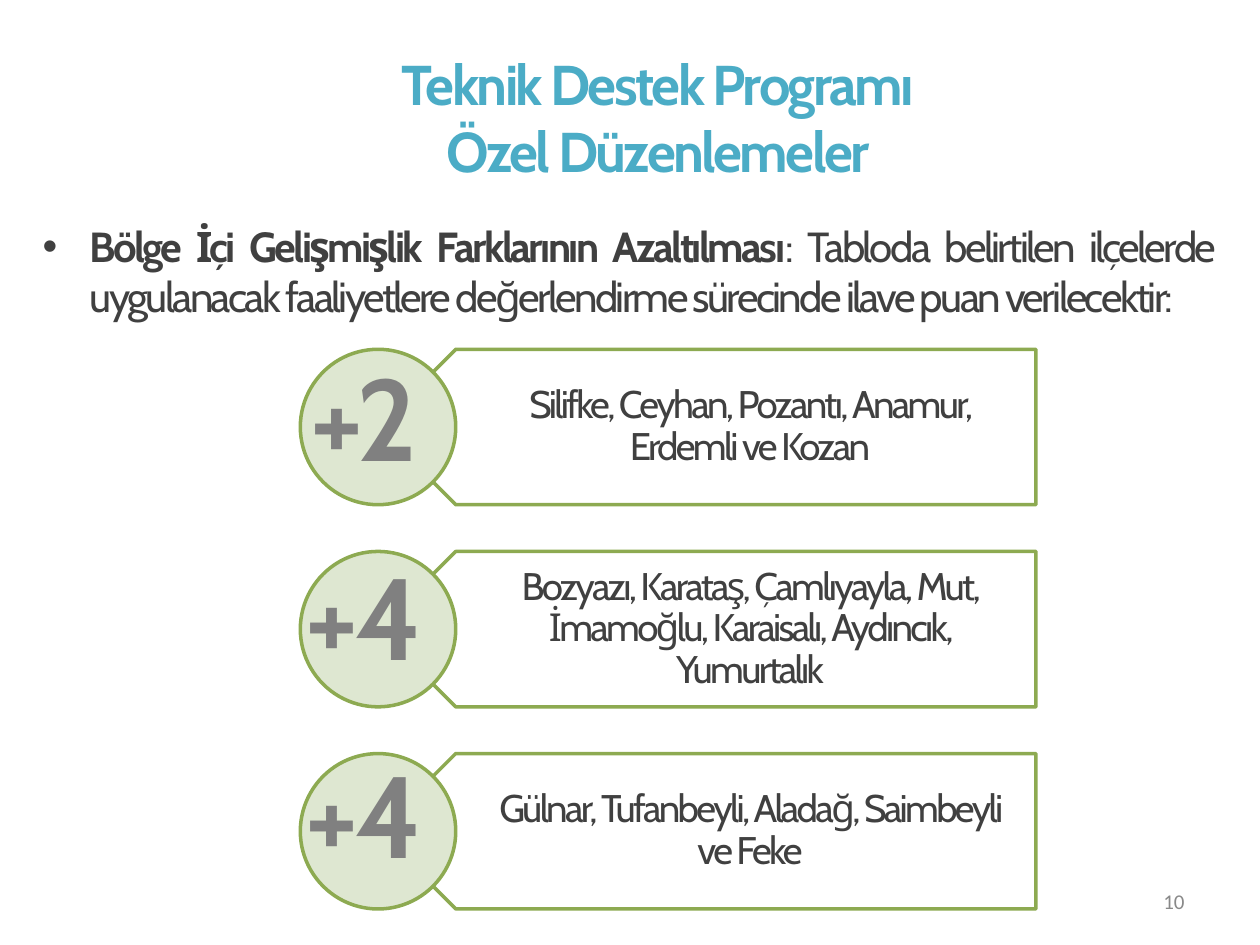
from pptx import Presentation
from pptx.dml.color import RGBColor
from pptx.enum.shapes import MSO_SHAPE as SHAPE
from pptx.enum.text import MSO_ANCHOR as ANCHOR, PP_ALIGN as ALIGN
from pptx.oxml.ns import qn
from pptx.util import Pt
from lxml import etree

TEAL = RGBColor(0x4B, 0xAC, 0xC6)
DARK = RGBColor(0x40, 0x40, 0x40)
GRAY = RGBColor(0x80, 0x80, 0x80)
LIGHT_GRAY = RGBColor(0x89, 0x89, 0x89)
GREEN = RGBColor(0x8D, 0xAA, 0x51)
PALE_GREEN = RGBColor(0xDE, 0xE7, 0xD1)
WHITE = RGBColor(0xFF, 0xFF, 0xFF)


def add_run(p, text, size, color, bold=False, font="Cabin", spacing=-150):
    r = p.add_run()
    r.text = text
    r.font.size = Pt(size)
    r.font.name = font
    r.font.bold = bold
    r.font.color.rgb = color
    if spacing:
        r.font._element.set("spc", str(spacing))


def add_outlined(kind, left, top, width, height, fill):
    sp = s.shapes.add_shape(kind, Pt(left), Pt(top), Pt(width), Pt(height))
    sp.shadow.inherit = False
    sp.fill.solid()
    sp.fill.fore_color.rgb = fill
    sp.line.color.rgb = GREEN
    sp.line.width = Pt(2)
    return sp


prs = Presentation()
prs.slide_width, prs.slide_height = Pt(720), Pt(540)
s = prs.slides.add_slide(prs.slide_layouts[5])

# Title
title = s.shapes.title
title.left, title.top, title.width, title.height = Pt(52), Pt(21.6), Pt(648), Pt(90)
tf = title.text_frame
tf.vertical_anchor = ANCHOR.MIDDLE
for i, line in enumerate(["Teknik Destek Programı", "Özel Düzenlemeler"]):
    p = tf.add_paragraph() if i else tf.paragraphs[0]
    p.alignment = ALIGN.CENTER
    add_run(p, line, 32, TEAL, bold=True)

# Slide number
tf = s.shapes.add_textbox(Pt(516), Pt(500.5), Pt(168), Pt(28.75)).text_frame
tf.word_wrap = True
tf.vertical_anchor = ANCHOR.MIDDLE
p = tf.paragraphs[0]
p.alignment = ALIGN.RIGHT
add_run(p, "10", 12, LIGHT_GRAY, font="Calibri", spacing=0)

# Bulleted introduction
tf = s.shapes.add_textbox(Pt(17.2), Pt(122.4), Pt(683.3), Pt(94.3)).text_frame
tf.word_wrap = True
p = tf.paragraphs[0]
p.alignment = ALIGN.JUSTIFY
pPr = p._p.get_or_add_pPr()
pPr.set("marL", str(Pt(27)))
pPr.set("indent", str(Pt(-27)))
etree.SubElement(pPr, qn("a:buFont")).set("typeface", "Arial")
etree.SubElement(pPr, qn("a:buChar")).set("char", "•")
add_run(p, "Bölge İçi Gelişmişlik Farklarının Azaltılması", 24, DARK, bold=True)
add_run(p, ": Tabloda belirtilen ilçelerde uygulanacak faaliyetlere "
           "değerlendirme sürecinde ilave puan verilecektir:", 24, DARK)

# One row per extra score: arrow, districts, circle, score
rows = [
    ("+2 ", "Silifke, Ceyhan, Pozantı, Anamur, Erdemli ve Kozan"),
    ("+4 ", "Bozyazı, Karataş, Çamlıyayla, Mut, İmamoğlu, Karaisalı, "
            "Aydıncık, Yumurtalık"),
    ("+4 ", "Gülnar, Tufanbeyli, Aladağ, Saimbeyli ve Feke"),
]
ROW_TOP, ROW_STEP, ROW_HEIGHT = 199.6, 115.5, 88.8
SCORE_TOP, SCORE_STEP = 194.4, 113.4

for i, (score, districts) in enumerate(rows):
    top = ROW_TOP + i * ROW_STEP
    arrow = add_outlined(SHAPE.PENTAGON, 216, top, 376, ROW_HEIGHT, WHITE)
    arrow.rotation = 180

    tf = s.shapes.add_textbox(Pt(238.3), Pt(top), Pt(353.7), Pt(ROW_HEIGHT)).text_frame
    tf.word_wrap = True
    tf.vertical_anchor = ANCHOR.MIDDLE
    tf.margin_left, tf.margin_right = Pt(39), Pt(12.2)
    tf.margin_top = tf.margin_bottom = Pt(6.6)
    p = tf.paragraphs[0]
    p.alignment = ALIGN.CENTER
    p.line_spacing = 0.9
    add_run(p, districts, 22, DARK)

    add_outlined(SHAPE.OVAL, 171.6, top, ROW_HEIGHT, ROW_HEIGHT, PALE_GREEN)

    score_top = SCORE_TOP + i * SCORE_STEP
    tf = s.shapes.add_textbox(Pt(128), Pt(score_top), Pt(173.5), Pt(87.1)).text_frame
    tf.word_wrap = True
    p = tf.paragraphs[0]
    p.alignment = ALIGN.CENTER
    add_run(p, score, 66, GRAY, bold=True)

prs.save("out.pptx")
